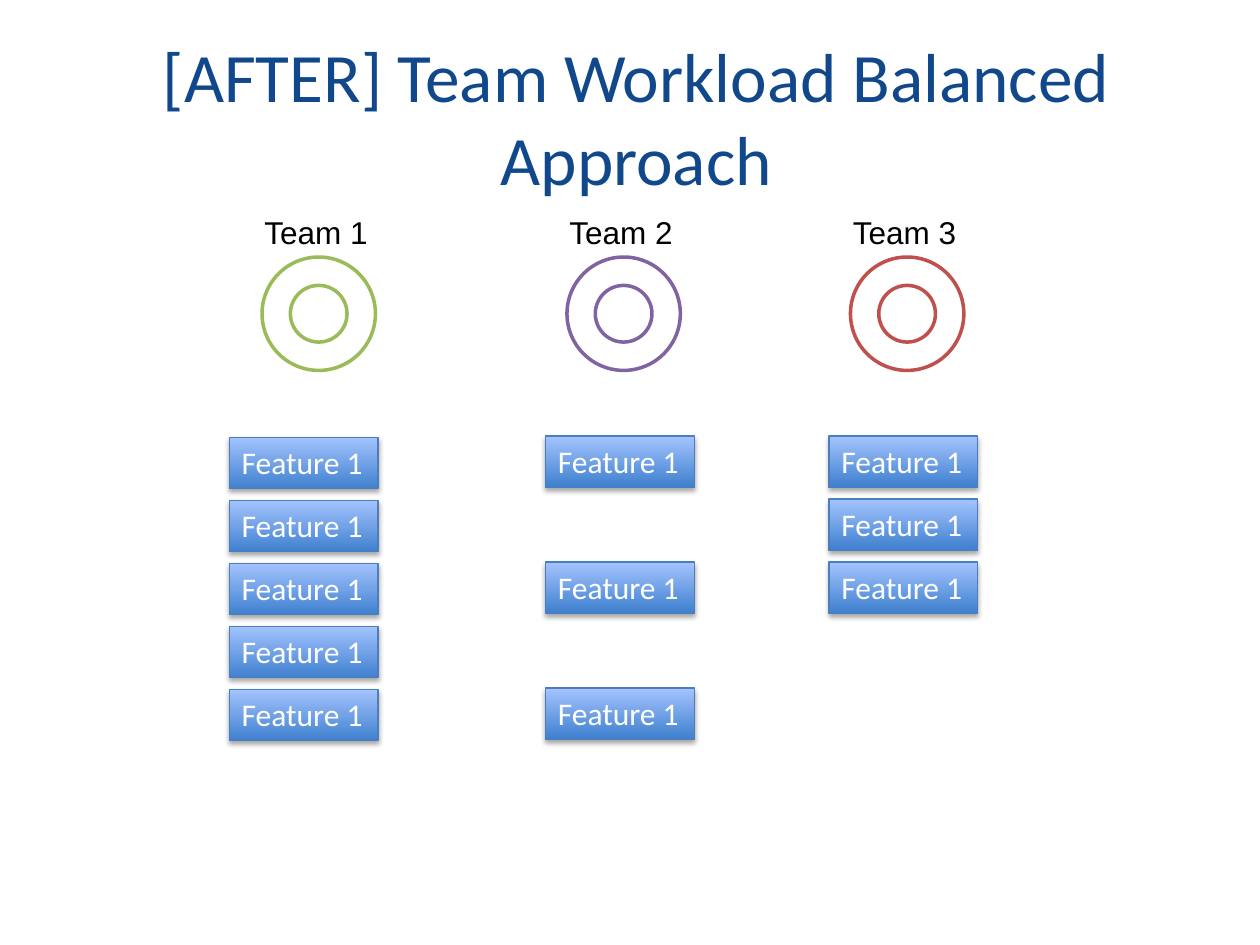
import lxml.etree
import pptx
import pptx.dml.color
import pptx.enum.shapes
import pptx.enum.text
import pptx.oxml.ns
import pptx.util

Inches, Pt = pptx.util.Inches, pptx.util.Pt
RGB = pptx.dml.color.RGBColor.from_string
SHAPE = pptx.enum.shapes.MSO_SHAPE
ALIGN = pptx.enum.text.PP_ALIGN
ANCHOR = pptx.enum.text.MSO_ANCHOR

THEME = {
    "title": "11488B", "label": "000000", "white": "FFFFFF",
    "card_dark": "3F80CE", "card_light": "A4C4FF", "card_line": "4B7EBC",
    "heading_font": "Calibri", "label_font": "Arial",
    "title_size": 39.6, "text_size": 18,
}


def write(s, text, *, font, color, size=THEME["text_size"], align=ALIGN.LEFT,
          anchor=ANCHOR.TOP, wrap=False):
    tf = s.text_frame
    tf.word_wrap = wrap
    tf.vertical_anchor = anchor
    p = tf.paragraphs[0]
    p.alignment = align
    r = p.add_run()
    r.text = text
    r.font.name, r.font.size = font, Pt(size)
    r.font.color.rgb = RGB(color)


def cast_shadow(s):
    """Give the shape a soft shadow straight below it."""
    s.shadow.inherit = False
    effects = s._element.spPr.find(pptx.oxml.ns.qn("a:effectLst"))
    shadow = lxml.etree.SubElement(
        effects, pptx.oxml.ns.qn("a:outerShdw"), blurRad=str(Pt(3.1)),
        dist=str(Pt(1.8)), dir="5400000", rotWithShape="0")
    black = lxml.etree.SubElement(shadow, pptx.oxml.ns.qn("a:srgbClr"), val="000000")
    lxml.etree.SubElement(black, pptx.oxml.ns.qn("a:alpha"), val="35000")


prs = pptx.Presentation()
prs.slide_width, prs.slide_height = Inches(10), Inches(7.5)
slide = prs.slides.add_slide(prs.slide_layouts[5])

title = slide.shapes.title
title.left, title.top = Inches(0.33), Inches(0.3)
title.width, title.height = Inches(9.44), Inches(1.25)
write(title, "[AFTER] Team Workload Balanced Approach", font=THEME["heading_font"],
      color=THEME["title"], size=THEME["title_size"], align=ALIGN.CENTER,
      anchor=ANCHOR.MIDDLE, wrap=True)

# Team name, ring colour, ring left, card left, first card top, occupied rows
teams = [
    ("Team 1", "9BBB59", 2.08, 1.82, 3.47, (0, 1, 2, 3, 4)),
    ("Team 2", "8064A2", 4.5, 4.33, 3.46, (0, 2, 4)),
    ("Team 3", "C0504D", 6.75, 6.58, 3.46, (0, 1, 2)),
]
ROW = 0.5

for name, color, ring_left, card_left, card_top, rows in teams:
    ring = slide.shapes.add_shape(SHAPE.DONUT, Inches(ring_left), Inches(2.04),
                                  Inches(0.9), Inches(0.9))
    ring.shadow.inherit = False
    ring.fill.solid()
    ring.fill.fore_color.rgb = RGB(THEME["white"])
    ring.line.color.rgb = RGB(color)
    ring.line.width = Pt(2)

    label = slide.shapes.add_textbox(Inches(ring_left - 0.08), Inches(1.64),
                                     Inches(1.03), Inches(0.4))
    write(label, name, font=THEME["label_font"], color=THEME["label"])

    for row in rows:
        card = slide.shapes.add_shape(SHAPE.RECTANGLE, Inches(card_left),
                                      Inches(card_top + row * ROW),
                                      Inches(1.18), Inches(0.41))
        card.fill.gradient()
        card.fill.gradient_angle = 90
        stops = zip(card.fill.gradient_stops, (THEME["card_dark"], THEME["card_light"]))
        for position, (stop, shade) in enumerate(stops):
            stop.position = position
            stop.color.rgb = RGB(shade)
        card.line.color.rgb = RGB(THEME["card_line"])
        card.line.width = Pt(0.75)
        cast_shadow(card)
        write(card, "Feature 1", font=THEME["heading_font"], color=THEME["white"])

prs.save("out.pptx")
